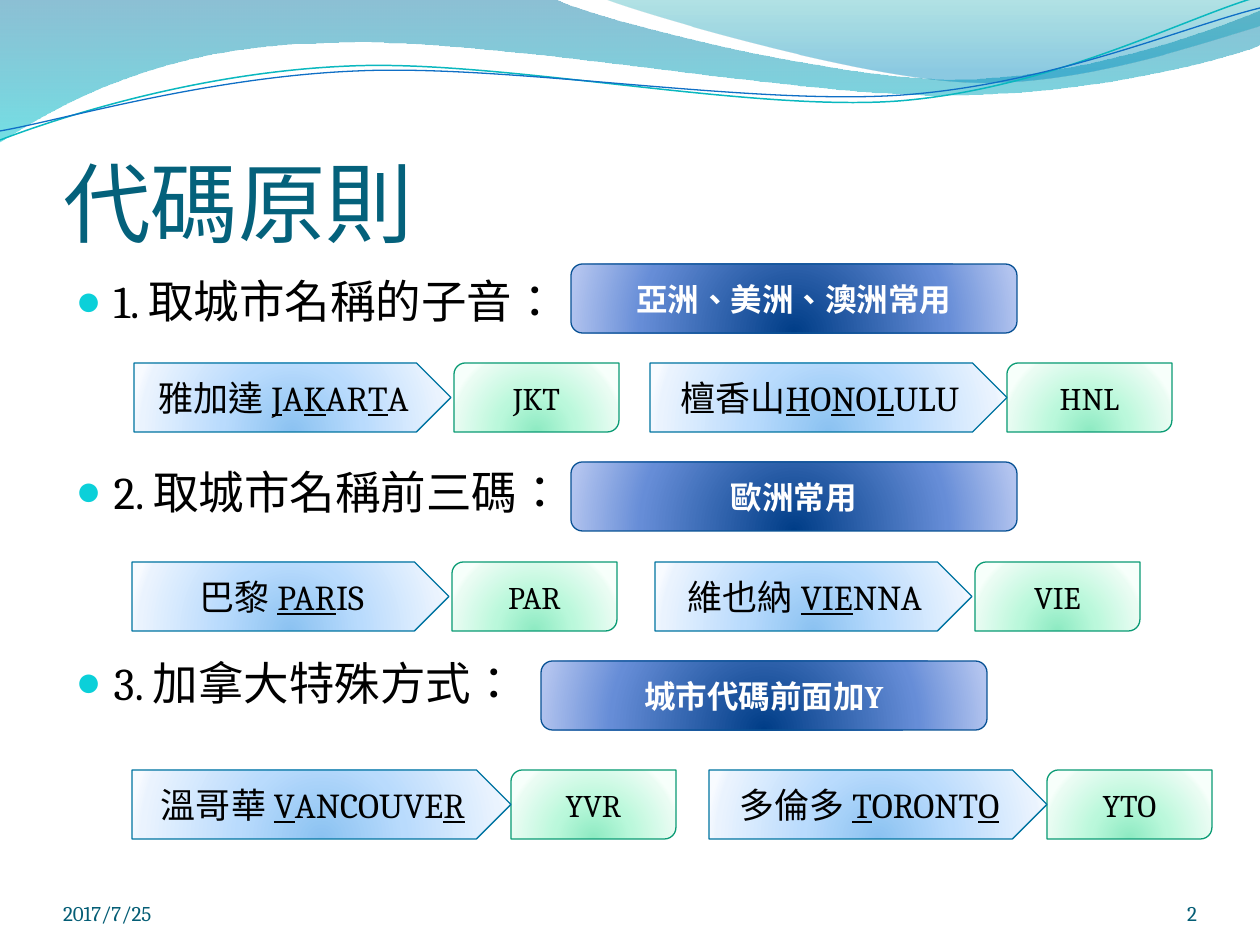
from lxml import etree
from pptx import Presentation
from pptx.dml.color import RGBColor
from pptx.enum.shapes import MSO_SHAPE
from pptx.enum.text import MSO_ANCHOR, PP_ALIGN
from pptx.oxml import parse_xml
from pptx.oxml.ns import nsdecls, qn
from pptx.util import Pt

PX = 9144000 // 1260  # one pixel in EMU
SERIF, SANS = "Cambria", "Calibri"
BANNER, ARROW, CODE = (
    MSO_SHAPE.ROUNDED_RECTANGLE, MSO_SHAPE.PENTAGON, MSO_SHAPE.ROUND_2_DIAG_RECTANGLE)
LEFT, CENTER, RIGHT = PP_ALIGN.LEFT, PP_ALIGN.CENTER, PP_ALIGN.RIGHT
MIDDLE, BOTTOM = MSO_ANCHOR.MIDDLE, MSO_ANCHOR.BOTTOM
BOX_HEIGHT, BANNER_WIDTH, CODE_WIDTH = 69, 446, 165

# Gradient stops (position, colour) and outline
LOOKS = {
    BANNER: ([(0, "003D87"), (68, "668DD7"), (100, "B3C4EF")], "095295"),
    ARROW: ([(0, "8BC2F1"), (43, "B9DBFD"), (93, "EAF3FE"), (100, "F8FBFF")], "0074A1"),
    CODE: ([(0, "8DEAC2"), (43, "BAF8DB"), (93, "EAFCF3"), (100, "F7FFFB")], "0A9B74"),
}

# Rule, banner text, banner left, banner top, examples top,
# examples: (left, width, gap to code, city with _underlined_ letters, code)
RULES = [
    ("1. 取城市名稱的子音：", "亞洲、美洲、澳洲常用", 571, 264, 363,
     [(134, 317, 3, "雅加達 _J_A_K_AR_T_A", "JKT"),
      (650, 357, 0, "檀香山_H_O_N_O_L_ULU", "HNL")]),
    ("2. 取城市名稱前三碼：", "歐洲常用", 571, 462, 562,
     [(132, 317, 3, "巴黎 _PAR_IS", "PAR"),
      (655, 317, 3, "維也納 _VIE_NNA", "VIE")]),
    ("3. 加拿大特殊方式：", "城市代碼前面加Y", 541, 661, 770,
     [(132, 379, 0, "溫哥華 _V_ANCOUVE_R_", "YVR"),
      (709, 338, 0, "多倫多 _T_ORONT_O_", "YTO")]),
]

# Wave outlines: a pair is a line to a point, six numbers are a Bezier curve
BROAD_WAVE = [
    (0, 0), (554, -1), (600, 21, 837, 79, 955, 79), (1074, 79, 1207, 33, 1260, 11),
    (1261, 45), (1239, 55, 1096, 96, 940, 95), (784, 95, 481, 35, 324, 43),
    (163, 45, 58, 105, -1, 142)]
CORNER_WAVE = [
    (604, -1), (641, 14, 859, 78, 969, 82), (1079, 87, 1211, 40, 1260, 26), (1260, 0)]
TEAL_CURVE = [
    (0, 140), (60, 117, 199, 72, 349, 66), (498, 59, 747, 112, 898, 101),
    (1050, 89, 1182, 19, 1257, -3)]
BLUE_CURVE = [
    (0, 131), (59, 121, 207, 77, 357, 71), (508, 64, 752, 106, 903, 95),
    (1053, 84, 1186, 26, 1260, 8)]


def rgb(colour):
    return RGBColor.from_string(colour)


def place(shape, left, top, width, height):
    shape.left, shape.top, shape.width, shape.height = (
        value * PX for value in (left, top, width, height))


def style(run, size, colour, name=SERIF, bold=False):
    run.font.size, run.font.name, run.font.bold = Pt(size), name, bold
    run.font.color.rgb = rgb(colour)
    run._r.get_or_add_rPr().set("lang", "zh-TW")


def gradient(shape, stops, direction):
    """Fill with stops of (position, colour[, alpha]) percentages."""
    marks = ""
    for position, colour, *alpha in stops:
        opacity = "".join(f'<a:alpha val="{value * 1000}"/>' for value in alpha)
        marks += (f'<a:gs pos="{position * 1000}">'
                  f'<a:srgbClr val="{colour}">{opacity}</a:srgbClr></a:gs>')
    shape.fill.background()
    plain = shape._element.spPr.find(qn("a:noFill"))
    plain.getparent().replace(plain, parse_xml(
        f'<a:gradFill {nsdecls("a")} rotWithShape="1">'
        f"<a:gsLst>{marks}</a:gsLst>{direction}</a:gradFill>"))


def add_wave(slide, outline, closed):
    """Draw the outline, joining each curve's three points into one Bezier."""
    start, *parts = outline
    points = [part[i:i + 2] for part in parts for i in range(0, len(part), 2)]
    builder = slide.shapes.build_freeform(*start, scale=PX)
    builder.add_line_segments(points, close=closed)
    wave = builder.convert_to_shape()
    wave.shadow.inherit = False
    segments = iter(list(wave._element.iter(qn("a:lnTo"))))
    for part in parts:
        first = next(segments)
        if len(part) == 6:
            first.tag = qn("a:cubicBezTo")
            for segment in (next(segments), next(segments)):
                first.append(segment[0])
                segment.getparent().remove(segment)
    return wave


def add_wave_area(slide, outline, stops):
    area = add_wave(slide, outline, True)
    gradient(area, stops, '<a:lin ang="5400000" scaled="1"/>')
    area.line.fill.background()


def add_wave_line(slide, outline, colour, width):
    curve = add_wave(slide, outline, False)
    curve.fill.background()
    curve.line.color.rgb = rgb(colour)
    curve.line.width = Pt(width)


def add_box(slide, kind, left, top, width, text, size, colour="000000", bold=False):
    """Add a glowing box; text between underscores is underlined."""
    stops, outline = LOOKS[kind]
    box = slide.shapes.add_shape(kind, 0, 0, 0, 0)
    place(box, left, top, width, BOX_HEIGHT)
    gradient(box, stops, '<a:path path="circle"><a:fillToRect l="50000" t="130000" '
                         'r="50000" b="-30000"/></a:path>')
    box.line.color.rgb = rgb(outline)
    box.line.width = Pt(0.75)
    box.shadow.inherit = False
    box.text_frame.vertical_anchor = MIDDLE
    paragraph = box.text_frame.paragraphs[0]
    paragraph.alignment = CENTER
    for index, part in enumerate(text.split("_")):
        if part:
            run = paragraph.add_run()
            run.text = part
            style(run, size, colour, bold=bold)
            run.font.underline = index % 2 == 1


def add_footer(slide, left, width, text, alignment):
    footer = slide.shapes.add_textbox(0, 0, 0, 0)
    place(footer, left, 876, width, 50)
    frame = footer.text_frame
    frame.word_wrap = True
    frame.margin_left = frame.margin_right = frame.margin_top = frame.margin_bottom = 0
    frame.vertical_anchor = BOTTOM
    frame.text = text
    frame.paragraphs[0].alignment = alignment
    style(frame.paragraphs[0].runs[0], 12, "045D75")


def fill_title(title, text):
    place(title, 63, 97, 1134, 157)
    frame = title.text_frame
    frame.margin_left = frame.margin_right = frame.margin_bottom = 0
    frame.vertical_anchor = BOTTOM
    frame.text = text
    frame.paragraphs[0].alignment = LEFT
    style(frame.paragraphs[0].runs[0], 50, "04617B", SANS)


def fill_rules(body, rules):
    place(body, 63, 267, 1134, 605)
    body.text_frame.text = "\n".join(rules)
    for index, paragraph in enumerate(body.text_frame.paragraphs):
        paragraph.line_spacing = Pt(31)
        paragraph.space_before = Pt(78 if index else 0)
        properties = paragraph._p.get_or_add_pPr()
        properties.set("marL", str(38 * PX))
        properties.set("indent", str(-38 * PX))
        colour = etree.SubElement(properties, qn("a:buClr"))
        etree.SubElement(colour, qn("a:srgbClr"), val="0BD0D9")
        etree.SubElement(properties, qn("a:buSzPct"), val="95000")
        etree.SubElement(properties, qn("a:buChar"), char="●")
        style(paragraph.runs[0], 26, "000000")


def main():
    deck = Presentation()
    deck.slide_width, deck.slide_height = 1260 * PX, 945 * PX
    slide = deck.slides.add_slide(deck.slide_layouts[1])

    # Waves along the top
    add_wave_area(slide, BROAD_WAVE, [(0, "0074A1", 45), (100, "00C6CF", 55)])
    add_wave_area(slide, CORNER_WAVE, [(0, "00A1A9", 30), (80, "008BBF", 45)])
    add_wave_line(slide, TEAL_CURVE, "0AB8BF", 0.85)
    add_wave_line(slide, BLUE_CURVE, "0F6FC6", 0.75)

    # Title and list of rules
    fill_title(slide.shapes.title, "代碼原則")
    fill_rules(slide.placeholders[1], [rule[0] for rule in RULES])

    # Banner and examples for each rule
    for _, usage, banner_left, banner_top, top, examples in RULES:
        add_box(slide, BANNER, banner_left, banner_top, BANNER_WIDTH, usage, 18,
                "FFFFFF", True)
        for left, width, gap, city, code in examples:
            add_box(slide, CODE, left + width + gap, top, CODE_WIDTH, code, 18)
            add_box(slide, ARROW, left, top, width, city, 20)

    # Date and slide number
    add_footer(slide, 63, 294, "2017/7/25", LEFT)
    add_footer(slide, 1092, 105, "2", RIGHT)
    deck.save("out.pptx")


if __name__ == "__main__":
    main()
